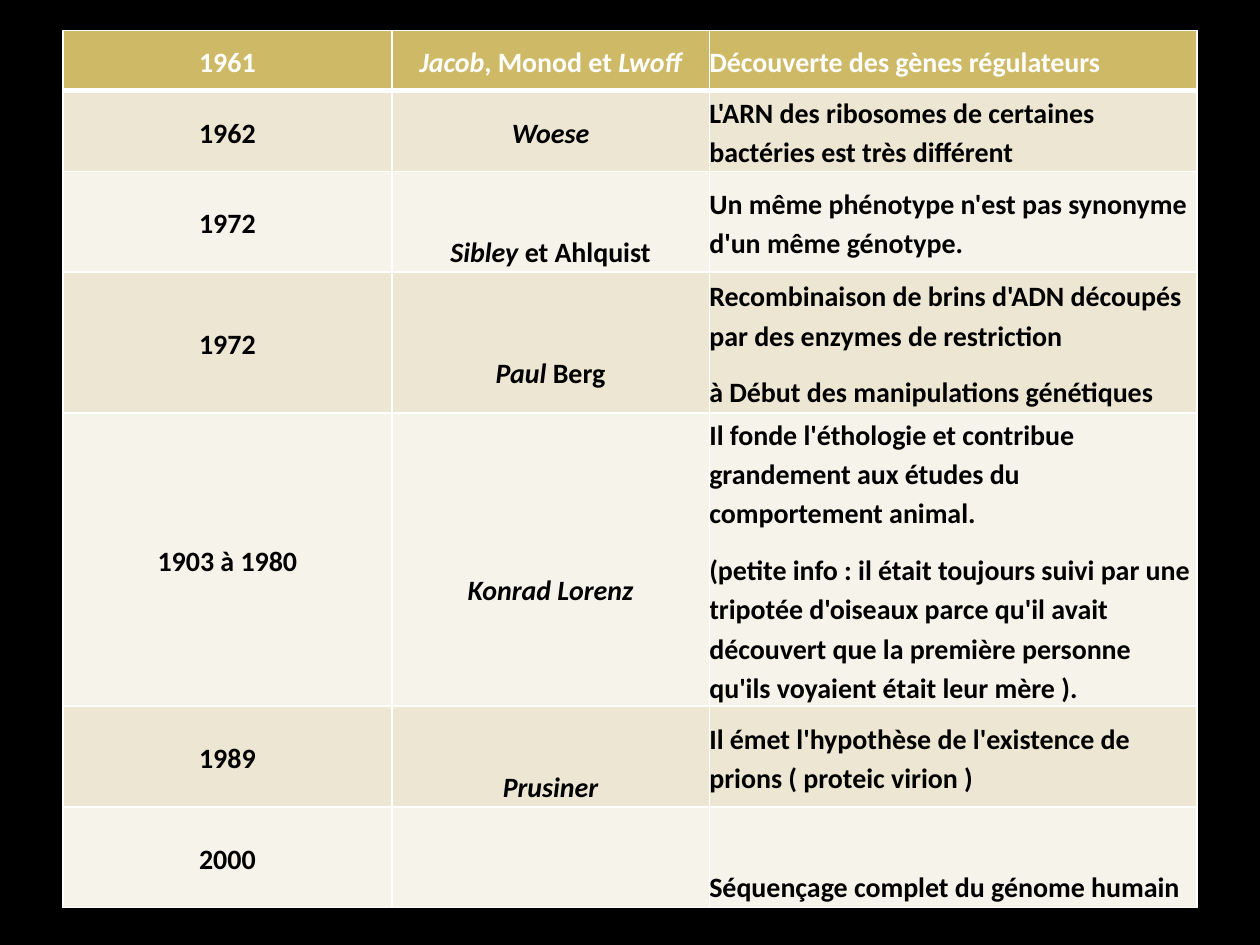
from typing import NamedTuple

from lxml.etree import SubElement
from pptx import Presentation
from pptx.dml.color import RGBColor
from pptx.enum.text import MSO_ANCHOR, PP_ALIGN
from pptx.oxml.ns import qn
from pptx.util import Inches, Pt

COLORS = {
    "background": "000000",
    "header": "CEB966",
    "band_dark": "EDE6D3",
    "band_light": "F6F3EA",
    "border": "FFFFFF",
    "header_text": "FFFFFF",
    "text": "000000",
}
FONT, FONT_SIZE = "Calibri", 16
LINE_SPACING, SPACE_AFTER = 1.15, 10
LOWERED = 0.45  # inches: one line of text with its paragraph gap
THIN, THICK = 1, 3
TABLE_LEFT, TABLE_TOP = 0.5, 0.24
COLUMN_WIDTHS = (2.61, 2.52, 3.87)
ALIGNMENTS = (PP_ALIGN.CENTER, PP_ALIGN.CENTER, PP_ALIGN.LEFT)


class Discovery(NamedTuple):
    """A table row; asterisks in the names enclose italic words."""
    height: float
    year: str
    names: str
    finding: str
    lowered_column: int | None = None


DISCOVERIES = (
    Discovery(0.48, "1961", "*Jacob*, Monod et *Lwoff*", "Découverte des gènes régulateurs"),
    Discovery(0.64, "1962", "*Woese*",
              "L'ARN des ribosomes de certaines bactéries est très différent"),
    Discovery(0.8, "1972", "*Sibley* et Ahlquist",
              "Un même phénotype n'est pas synonyme d'un même génotype.", 1),
    Discovery(1.12, "1972", "*Paul* Berg",
              "Recombinaison de brins d'ADN découpés par des enzymes de restriction\n"
              "à Début des manipulations génétiques", 1),
    Discovery(2.08, "1903 à 1980", "*Konrad Lorenz*",
              "Il fonde l'éthologie et contribue grandement aux études du comportement animal.\n"
              "(petite info : il était toujours suivi par une tripotée d'oiseaux parce qu'il avait "
              "découvert que la première personne qu'ils voyaient était leur mère ).", 1),
    Discovery(0.8, "1989", "*Prusiner*",
              "Il émet l'hypothèse de l'existence de prions ( proteic virion )", 1),
    Discovery(0.8, "2000", "", "Séquençage complet du génome humain", 2),
)


def rgb(name: str) -> RGBColor:
    return RGBColor.from_string(COLORS[name])


def set_borders(cell, top: int, bottom: int) -> None:
    properties = cell._tc.get_or_add_tcPr()
    widths = {"a:lnL": THIN, "a:lnR": THIN, "a:lnT": top, "a:lnB": bottom}
    for tag, width in widths.items():
        line = SubElement(properties, qn(tag), w=str(Pt(width)))
        fill = SubElement(line, qn("a:solidFill"))
        SubElement(fill, qn("a:srgbClr"), val=COLORS["border"])


def write_paragraph(paragraph, text: str, alignment: PP_ALIGN, color: str) -> None:
    paragraph.alignment = alignment
    paragraph.line_spacing = LINE_SPACING
    paragraph.space_after = Pt(SPACE_AFTER)
    for index, part in enumerate(text.split("*")):
        if part:
            run = paragraph.add_run()
            run.text = part
            font = run.font
            font.name, font.size, font.bold = FONT, Pt(FONT_SIZE), True
            font.italic = index % 2 == 1
            font.color.rgb = rgb(color)


def fill_cell(cell, text: str, row: int, column: int, lowered: bool) -> None:
    set_borders(cell, THICK if row == 1 else THIN, THICK if row == 0 else THIN)
    band = "band_dark" if row % 2 else "band_light"
    cell.fill.solid()
    cell.fill.fore_color.rgb = rgb(band if row else "header")
    cell.vertical_anchor = MSO_ANCHOR.MIDDLE
    cell.margin_left = cell.margin_right = cell.margin_bottom = 0
    cell.margin_top = Inches(LOWERED if lowered else 0)
    frame = cell.text_frame
    for index, line in enumerate(text.split("\n")):
        paragraph = frame.add_paragraph() if index else frame.paragraphs[0]
        write_paragraph(paragraph, line, ALIGNMENTS[column], "text" if row else "header_text")


def add_discovery_table(slide) -> None:
    table = slide.shapes.add_table(
        len(DISCOVERIES), len(COLUMN_WIDTHS), Inches(TABLE_LEFT), Inches(TABLE_TOP),
        Inches(sum(COLUMN_WIDTHS)), Inches(sum(item.height for item in DISCOVERIES)),
    ).table
    for column, width in zip(table.columns, COLUMN_WIDTHS):
        column.width = Inches(width)
    for row, item in enumerate(DISCOVERIES):
        table.rows[row].height = Inches(item.height)
        for column, text in enumerate((item.year, item.names, item.finding)):
            fill_cell(table.cell(row, column), text, row, column, column == item.lowered_column)


def main() -> None:
    presentation = Presentation()
    presentation.slide_width, presentation.slide_height = Inches(10), Inches(7.5)
    slide = presentation.slides.add_slide(presentation.slide_layouts[6])
    slide.background.fill.solid()
    slide.background.fill.fore_color.rgb = rgb("background")
    add_discovery_table(slide)
    presentation.save("out.pptx")


if __name__ == "__main__":
    main()
